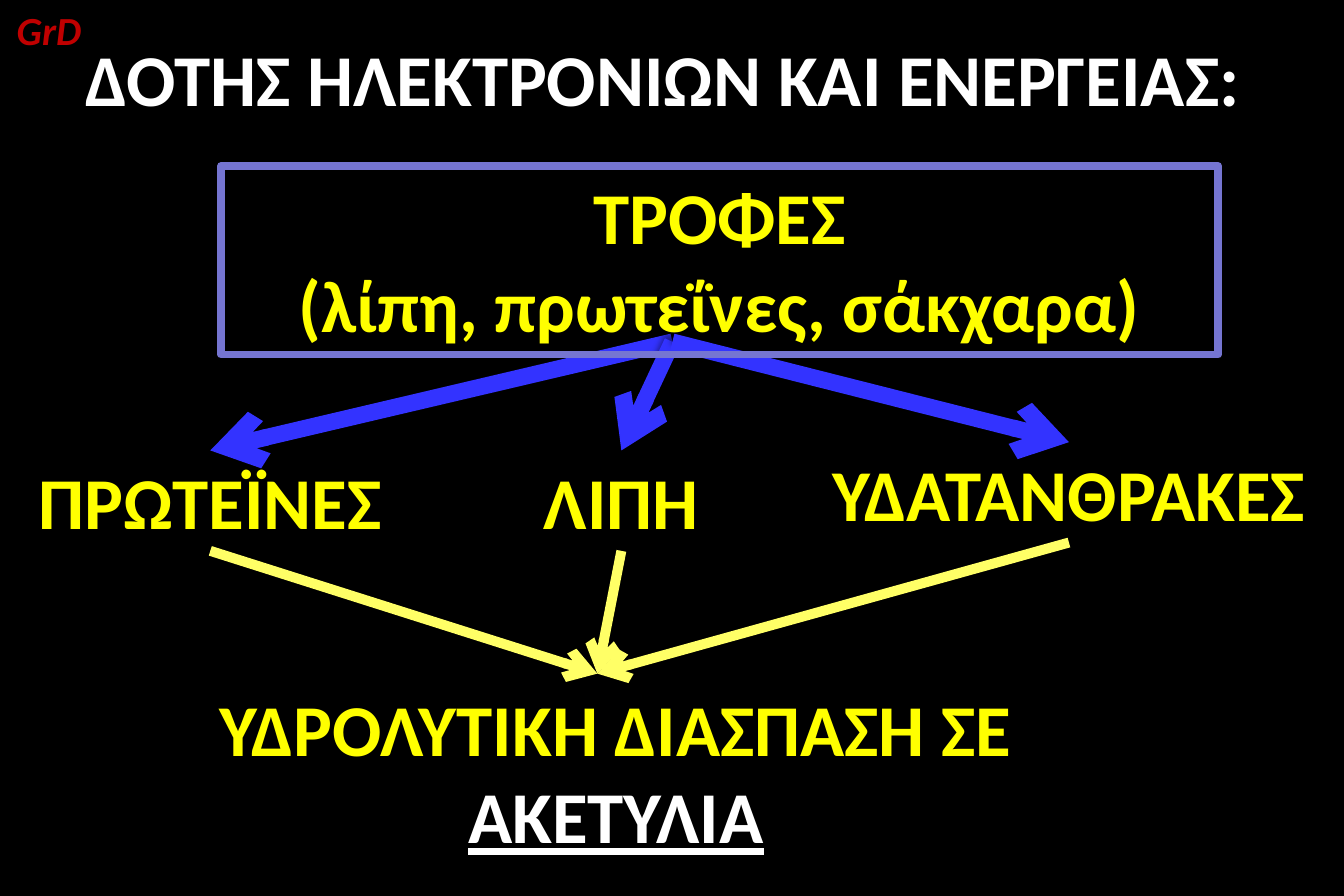
from dataclasses import dataclass

from lxml import etree
from pptx import Presentation
from pptx.dml.color import RGBColor
from pptx.enum.shapes import MSO_CONNECTOR, MSO_SHAPE
from pptx.enum.text import MSO_ANCHOR, MSO_AUTO_SIZE, PP_ALIGN
from pptx.oxml.ns import qn
from pptx.util import Pt

STRAIGHT = MSO_CONNECTOR.STRAIGHT
RECTANGLE = MSO_SHAPE.RECTANGLE
TOP_ANCHOR = MSO_ANCHOR.TOP
FIT_SHAPE = MSO_AUTO_SIZE.SHAPE_TO_FIT_TEXT
CENTER = PP_ALIGN.CENTER
TOP_SIDE, BOTTOM_SIDE = 0, 2

FONT = "Calibri"
COLORS = {
    "background": "000000",
    "white": "FFFFFF",
    "yellow": "FFFF00",
    "red": "C00000",
    "frame": "7575D1",
    "split": "3333FF",
    "merge": "FFFF66",
}
LINE_HEIGHT = 60.5
TWO_LINES = 113.75
FOODS_POINT = (405.25, 206)
ACETYL_POINT = (360, 406)


@dataclass(frozen=True)
class Span:
    text: str
    color: str = "yellow"
    size: float = 44
    italic: bool = False
    underline: bool = False


@dataclass(frozen=True)
class Block:
    left: float
    top: float
    width: float
    height: float
    paragraphs: tuple[tuple[Span, ...], ...]
    framed: bool = False


TITLE = Block(0, 16.5, 810, LINE_HEIGHT,
              ((Span("ΔΟΤΗΣ ΗΛΕΚΤΡΟΝΙΩΝ ΚΑΙ ΕΝΕΡΓΕΙΑΣ: ", "white"),),))
NUTRIENTS = (
    Block(0, 271.5, 253.5, LINE_HEIGHT, ((Span("ΠΡΩΤΕΪΝΕΣ"),),)),
    Block(281.5, 271.5, 186, LINE_HEIGHT, ((Span("ΛΙΠΗ"),),)),
    Block(484, 266.5, 320.5, LINE_HEIGHT, ((Span("ΥΔΑΤΑΝΘΡΑΚΕΣ"),),)),
)
INITIALS = Block(0, 0, 59, 36, ((Span("GrD", "red", 24, italic=True),),))
FOODS = Block(133.25, 100, 601, TWO_LINES,
              ((Span("ΤΡΟΦΕΣ"),), (Span("(λίπη, πρωτεΐνες, σάκχαρα)"),)), framed=True)
ACETYL = Block(98.75, 408.25, 545, TWO_LINES,
               ((Span("ΥΔΡΟΛΥΤΙΚΗ ΔΙΑΣΠΑΣΗ ΣΕ "),
                 Span("ΑΚΕΤΥΛΙΑ", "white", underline=True)),))


def color_of(name: str) -> RGBColor:
    return RGBColor.from_string(COLORS[name])


def add_block(page, block: Block):
    place = [Pt(value) for value in (block.left, block.top, block.width, block.height)]
    if block.framed:
        box = page.shapes.add_shape(RECTANGLE, *place)
        box.shadow.inherit = False
        box.fill.background()
        box.line.color.rgb = color_of("frame")
        box.line.width = Pt(4.5)
    else:
        box = page.shapes.add_textbox(*place)
    frame = box.text_frame
    frame.word_wrap = True
    frame.auto_size = FIT_SHAPE
    frame.vertical_anchor = TOP_ANCHOR
    for index, spans in enumerate(block.paragraphs):
        para = frame.add_paragraph() if index else frame.paragraphs[0]
        para.alignment = CENTER
        for span in spans:
            run = para.add_run()
            run.text = span.text
            font = run.font
            font.name = FONT
            font.size = Pt(span.size)
            font.bold = True
            font.italic = span.italic
            font.underline = span.underline
            font.color.rgb = color_of(span.color)
    return box


def add_arrow(page, start: tuple[float, float], end: tuple[float, float],
              color: str, width: float, shadowed: bool = False):
    arrow = page.shapes.add_connector(STRAIGHT, *(Pt(value) for value in start + end))
    arrow.line.color.rgb = color_of(color)
    arrow.line.width = Pt(width)
    properties = arrow.element.spPr
    etree.SubElement(properties.find(qn("a:ln")), qn("a:tailEnd"), type="arrow")
    effects = etree.SubElement(properties, qn("a:effectLst"))
    if shadowed:
        shadow = etree.SubElement(effects, qn("a:outerShdw"), blurRad=str(Pt(4)),
                                  dist=str(Pt(3)), dir=str(270 * 60000), rotWithShape="0")
        shade = etree.SubElement(shadow, qn("a:srgbClr"), val=COLORS["background"])
        etree.SubElement(shade, qn("a:alpha"), val="40000")
    return arrow


def main() -> None:
    deck = Presentation()
    deck.slide_width, deck.slide_height = Pt(810), Pt(540)
    page = deck.slides.add_slide(deck.slide_layouts[6])
    page.background.fill.solid()
    page.background.fill.fore_color.rgb = color_of("background")

    add_block(page, TITLE)
    nutrient_boxes = [add_block(page, block) for block in NUTRIENTS]
    for block, box in zip(NUTRIENTS, nutrient_boxes):
        top_middle = (block.left + block.width / 2, block.top)
        arrow = add_arrow(page, FOODS_POINT, top_middle, "split", 10, shadowed=True)
        arrow.end_connect(box, TOP_SIDE)

    add_block(page, INITIALS)
    add_block(page, FOODS)
    for block, box in zip(NUTRIENTS, nutrient_boxes):
        bottom_middle = (block.left + block.width / 2, block.top + block.height)
        arrow = add_arrow(page, bottom_middle, ACETYL_POINT, "merge", 6)
        arrow.begin_connect(box, BOTTOM_SIDE)
    add_block(page, ACETYL)

    deck.save("out.pptx")


if __name__ == "__main__":
    main()
